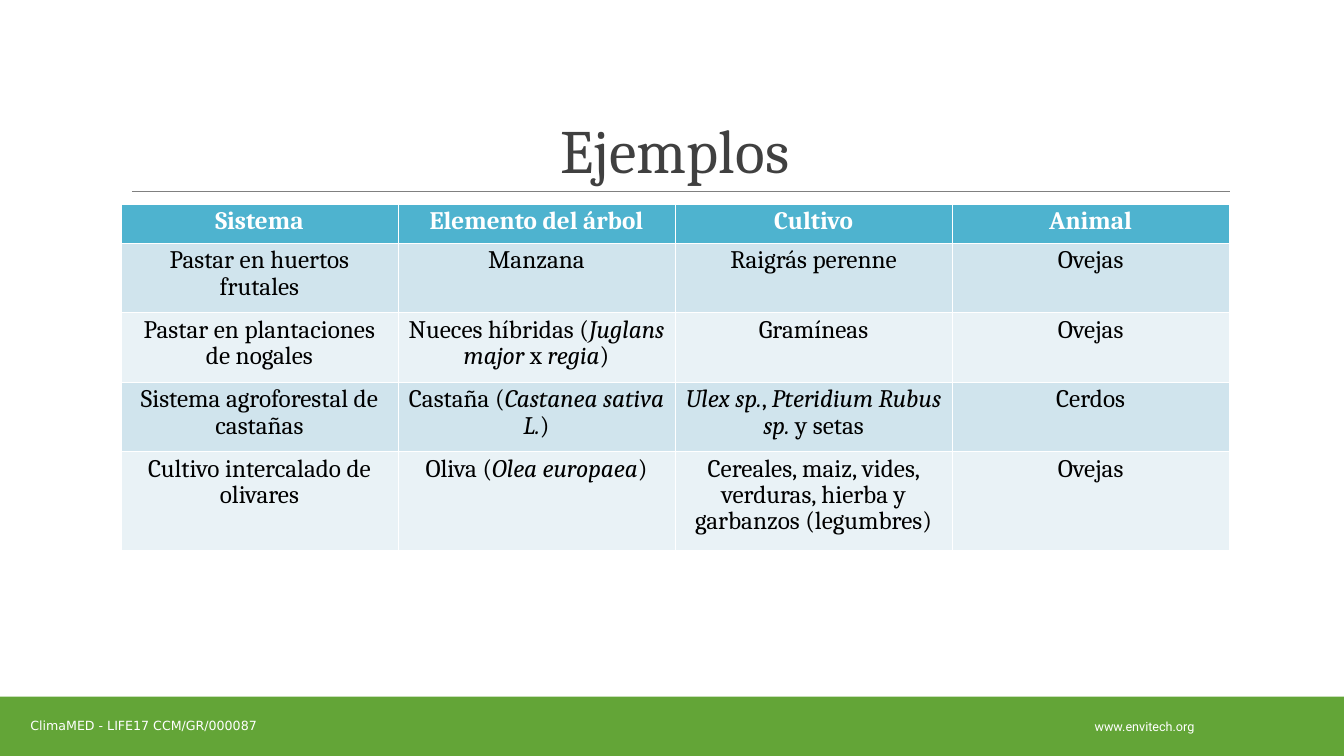
"""Build the slide "Ejemplos": a table of agroforestry systems over a green footer."""
from lxml.etree import SubElement
from pptx import Presentation
from pptx.dml.color import RGBColor
from pptx.enum.shapes import MSO_CONNECTOR, MSO_SHAPE
from pptx.enum.text import MSO_ANCHOR, PP_ALIGN
from pptx.oxml.ns import qn
from pptx.util import Inches, Pt


def color(hex_string):
    return RGBColor.from_string(hex_string)


def write(frame, text, font="Cambria", size=18, fill="000000", bold=False,
          spacing=1.0, anchor=MSO_ANCHOR.TOP):
    """Write centred text; parts between asterisks are italic."""
    frame.word_wrap = True
    frame.vertical_anchor = anchor
    paragraph = frame.paragraphs[0]
    paragraph.alignment = PP_ALIGN.CENTER
    paragraph.line_spacing = spacing
    for position, part in enumerate(text.split("*")):
        if part:
            run = paragraph.add_run()
            run.text = part
            run.font.name = font
            run.font.size = Pt(size)
            run.font.bold = bold
            run.font.italic = position % 2 == 1
            run.font.color.rgb = color(fill)


presentation = Presentation()
presentation.slide_width = Inches(13.34)
presentation.slide_height = Inches(7.5)
slide = presentation.slides.add_slide(presentation.slide_layouts[6])
shapes = slide.shapes

title_rule = shapes.add_connector(
    MSO_CONNECTOR.STRAIGHT, Inches(1.31), Inches(1.9), Inches(12.21), Inches(1.9))
title_rule.line.color.rgb = color("808080")
title_rule.line.width = Pt(0.5)
SubElement(title_rule._element.spPr, qn("a:effectLst"))

footer_band = shapes.add_shape(
    MSO_SHAPE.RECTANGLE, 0, Inches(6.91), Inches(13.34), Inches(0.59))
footer_band.shadow.inherit = False
footer_band.fill.solid()
footer_band.fill.fore_color.rgb = color("63A537")
footer_band.line.fill.background()

footer_texts = [
    ("www.envitech.org", "Roboto", 10.13, 7.01, 2.46),
    ("ClimaMED - LIFE17 CCM/GR/000087", "DejaVu Sans", -0.16, 7, 3.17),
]
for text, font, left, top, width in footer_texts:
    footer = shapes.add_textbox(Inches(left), Inches(top), Inches(width), Inches(0.4))
    write(footer.text_frame, text, font=font, size=9, fill="FFFFFF",
          anchor=MSO_ANCHOR.MIDDLE)

title = shapes.add_textbox(Inches(1.2), Inches(0.31), Inches(11), Inches(1.59))
write(title.text_frame, "Ejemplos", size=44, fill="404040", spacing=0.85,
      anchor=MSO_ANCHOR.BOTTOM)

systems = [
    ("Sistema", "Elemento del árbol", "Cultivo", "Animal"),
    ("Pastar en huertos frutales", "Manzana", "Raigrás perenne", "Ovejas"),
    ("Pastar en plantaciones de nogales",
     "Nueces híbridas (*Juglans major* x *regia*)", "Gramíneas", "Ovejas"),
    ("Sistema agroforestal de castañas", "Castaña (*Castanea sativa L.*)",
     "*Ulex sp.*, *Pteridium Rubus sp.* y setas", "Cerdos"),
    ("Cultivo intercalado de olivares", "Oliva (*Olea europaea*)",
     "Cereales, maiz, vides, verduras, hierba y garbanzos (legumbres)", "Ovejas"),
]
row_heights = [0.39, 0.69, 0.69, 0.69, 0.98]
row_fills = ["4EB3CF", "D0E4ED", "E9F2F6", "D0E4ED", "E9F2F6"]
systems_table = shapes.add_table(
    len(systems), 4, Inches(1.2), Inches(2.02), Inches(11), Inches(3.44)).table

for row_index, system in enumerate(systems):
    systems_table.rows[row_index].height = Inches(row_heights[row_index])
    is_header = row_index == 0
    for column_index, text in enumerate(system):
        cell = systems_table.cell(row_index, column_index)
        write(cell.text_frame, text, fill="FFFFFF" if is_header else "000000",
              bold=is_header, spacing=0.9)
        properties = cell._tc.get_or_add_tcPr()
        for side in ("lnL", "lnR", "lnT", "lnB"):
            border = SubElement(properties, qn(f"a:{side}"), w=str(Pt(0.06)))
            border_fill = SubElement(border, qn("a:solidFill"))
            SubElement(border_fill, qn("a:srgbClr"), val="FFFFFF")
        cell.fill.solid()
        cell.fill.fore_color.rgb = color(row_fills[row_index])

presentation.save("out.pptx")
